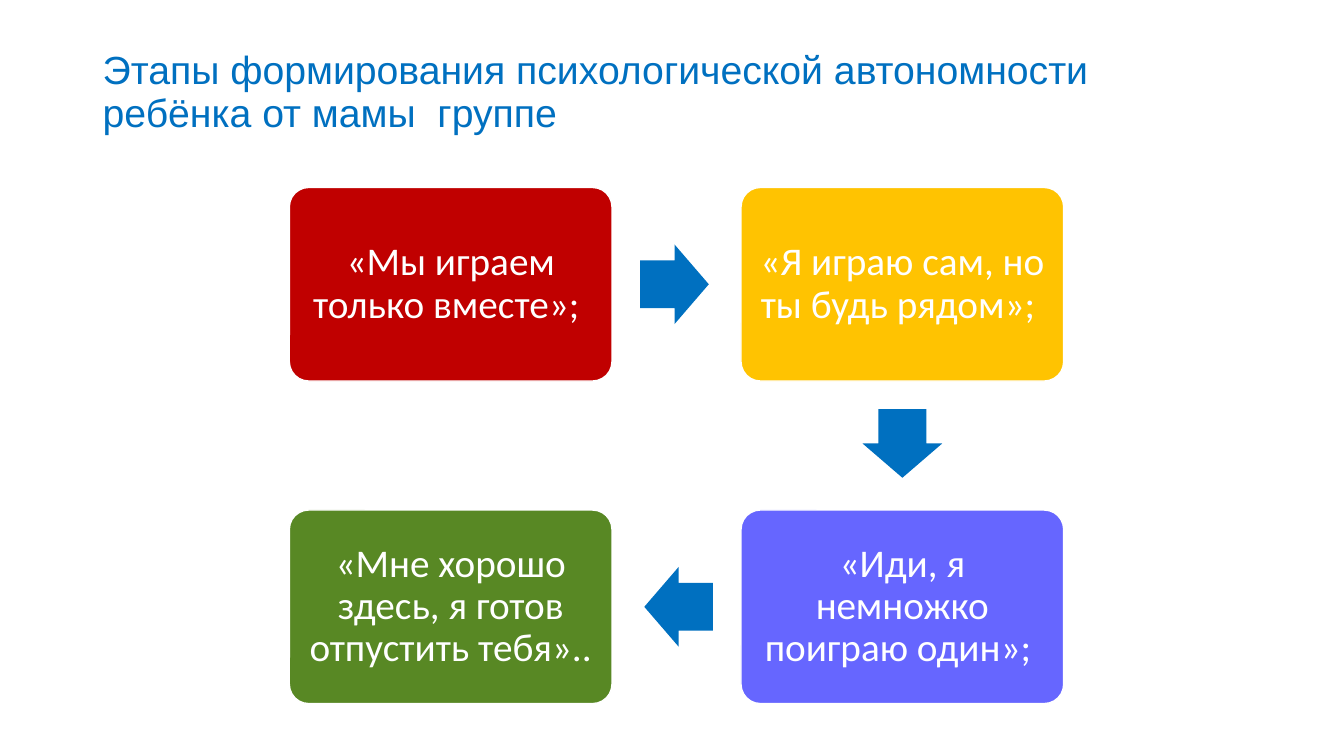
"""Build the slide on the stages of a child's psychological autonomy."""
from pptx import Presentation
from pptx.dml.color import RGBColor
from pptx.enum.shapes import MSO_SHAPE
from pptx.enum.text import MSO_ANCHOR, PP_ALIGN
from pptx.util import Inches, Pt

ROUNDED, ARROW = MSO_SHAPE.ROUNDED_RECTANGLE, MSO_SHAPE.RIGHT_ARROW
MIDDLE = MSO_ANCHOR.MIDDLE
LEFT, CENTER = PP_ALIGN.LEFT, PP_ALIGN.CENTER

TITLE = "Этапы формирования психологической автономности ребёнка от мамы  группе"
STAGES = [
    ("«Мы играем только вместе»; ", "C00000", 0, 0),
    ("«Я играю сам, но ты будь рядом»; ", "FFC301", 1, 0),
    ("«Иди, я немножко поиграю один»; ", "6666FF", 1, 1),
    ("«Мне хорошо здесь, я готов отпустить тебя».. ", "588824", 0, 1),
]
TURNS = [(1, 0, 0), (0, 1, 90), (-1, 0, 180)]
BLUE, WHITE = "0070C0", "FFFFFF"

SLIDE_SIZE = (13.33, 7.5)
TITLE_AREA = (0.92, 0.4, 11.5, 1.05)
FIRST_CENTER = (4.47, 2.82)
STEP = (4.48, 3.2)
BOX_SIZE = (3.2, 1.92)
ARROW_SIZE = (0.68, 0.79)
ARROW_LAG = 0.02
TEXT_INSET = 0.11


def color(value):
    return RGBColor.from_string(value)


def set_all(target, values):
    for name, value in values.items():
        setattr(target, name, value)


def write(box, text, font_name, ink, align, frame_values):
    frame = box.text_frame
    set_all(frame, {"word_wrap": True, "vertical_anchor": MIDDLE, **frame_values})
    para = frame.paragraphs[0]
    set_all(para, {"alignment": align, "line_spacing": 0.9})
    span = para.add_run()
    span.text = text
    set_all(span.font, {"name": font_name, "size": Pt(28)})
    span.font.color.rgb = color(ink)


def add_centered(page, kind, center, size, fill, adjustments):
    corner = [middle - length / 2 for middle, length in zip(center, size)]
    shape = page.shapes.add_shape(kind, *map(Inches, (*corner, *size)))
    shape.shadow.inherit = False
    shape.fill.solid()
    shape.fill.fore_color.rgb = color(fill)
    for index, value in enumerate(adjustments):
        shape.adjustments[index] = value
    return shape


def add_stage(page, text, fill, center):
    box = add_centered(page, ROUNDED, center, BOX_SIZE, fill, [0.1])
    box.line.color.rgb = color(WHITE)
    box.line.width = Pt(1)
    sides = ("left", "top", "right", "bottom")
    insets = {f"margin_{side}": Inches(TEXT_INSET) for side in sides}
    write(box, text, "Calibri", WHITE, CENTER, insets)


def add_turn(page, start, across, down, angle):
    center = [
        middle + way * (step / 2 - ARROW_LAG)
        for middle, way, step in zip(start, (across, down), STEP)
    ]
    arrow = add_centered(page, ARROW, center, ARROW_SIZE, BLUE, [0.6, 0.5])
    arrow.line.fill.background()
    arrow.rotation = angle


def main():
    deck = Presentation()
    deck.slide_width, deck.slide_height = map(Inches, SLIDE_SIZE)
    page = deck.slides.add_slide(deck.slide_layouts[6])
    title = page.shapes.add_textbox(*map(Inches, TITLE_AREA))
    write(title, TITLE, "Arial", BLUE, LEFT, {})

    centers = [
        [first + place * step for first, place, step in zip(FIRST_CENTER, cell, STEP)]
        for _, _, *cell in STAGES
    ]
    for (text, fill, *_), center in zip(STAGES, centers):
        add_stage(page, text, fill, center)
    for start, turn in zip(centers, TURNS):
        add_turn(page, start, *turn)
    deck.save("out.pptx")


if __name__ == "__main__":
    main()
